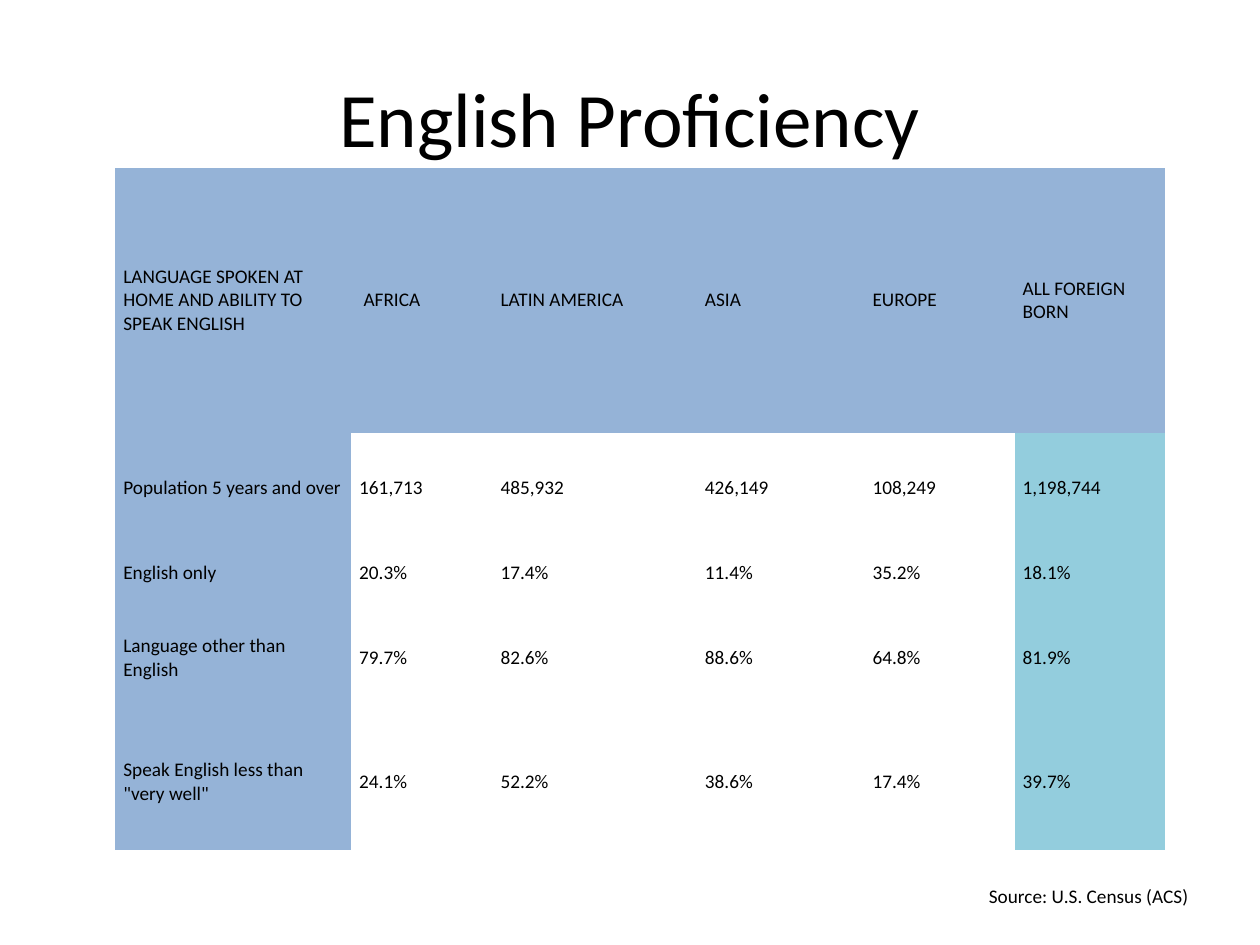
from dataclasses import dataclass

from pptx import Presentation
from pptx.dml.color import RGBColor
from pptx.enum.text import MSO_ANCHOR as Anchor, PP_ALIGN as Align
from pptx.oxml.ns import qn
from pptx.util import Pt


@dataclass(frozen=True)
class Theme:
    """Colours, font and type sizes of the slide."""
    font: str = "Calibri"
    text: RGBColor = RGBColor(0x00, 0x00, 0x00)
    heading_fill: RGBColor = RGBColor(0x95, 0xB3, 0xD7)
    total_fill: RGBColor = RGBColor(0x93, 0xCD, 0xDD)
    title_size: int = 44
    body_size: int = 11


THEME = Theme()
NO_STYLE_NO_GRID = "{2D5ABB26-0587-4C30-8999-92F81FD0307C}"
COLUMN_WIDTHS = [134.8, 80.8, 116.8, 95.8, 85.8, 85.8]
ROW_HEIGHTS = [151.2, 63.4, 33.8, 63.4, 77.8]
ROWS = [
    ["LANGUAGE SPOKEN AT HOME AND ABILITY TO SPEAK ENGLISH",
     " AFRICA", "LATIN AMERICA", "ASIA", "EUROPE", "ALL FOREIGN BORN"],
    ["Population 5 years and over",
     "161,713", "485,932", "426,149", "108,249", "1,198,744"],
    ["English only", "20.3%", "17.4%", "11.4%", "35.2%", "18.1%"],
    ["Language other than English", "79.7%", "82.6%", "88.6%", "64.8%", "81.9%"],
    ['Speak English less than "very well"',
     "24.1%", "52.2%", "38.6%", "17.4%", "39.7%"],
]


def style_paragraph(paragraph, size, align=Align.LEFT):
    """Set the theme font, a size and an alignment on a paragraph."""
    paragraph.alignment = align
    paragraph.font.name = THEME.font
    paragraph.font.size = Pt(size)
    paragraph.font.color.rgb = THEME.text


def add_text(slide, text, box, size, align=Align.LEFT, anchor=Anchor.TOP):
    """Add a wrapping text box with one paragraph."""
    shape = slide.shapes.add_textbox(*map(Pt, box))
    frame = shape.text_frame
    frame.word_wrap = True
    frame.vertical_anchor = anchor
    frame.text = text
    style_paragraph(frame.paragraphs[0], size, align)


def fill_cell(cell, color):
    """Fill a cell with a colour, or leave it clear."""
    if color is None:
        cell.fill.background()
    else:
        cell.fill.solid()
        cell.fill.fore_color.rgb = color


def cell_color(row, column):
    """Return the fill of a heading, total or plain cell."""
    if row == 0 or column == 0:
        return THEME.heading_fill
    return THEME.total_fill if column == len(COLUMN_WIDTHS) - 1 else None


def add_language_table(slide, left, top):
    """Add the table of language ability by region of birth."""
    frame = slide.shapes.add_table(
        len(ROWS), len(COLUMN_WIDTHS), Pt(left), Pt(top),
        Pt(sum(COLUMN_WIDTHS)), Pt(sum(ROW_HEIGHTS)))
    frame.element.find(f".//{qn('a:tableStyleId')}").text = NO_STYLE_NO_GRID
    table = frame.table
    table.first_row = table.horz_banding = False
    for column, width in zip(table.columns, COLUMN_WIDTHS):
        column.width = Pt(width)
    for row, height in zip(table.rows, ROW_HEIGHTS):
        row.height = Pt(height)
    for row, texts in enumerate(ROWS):
        for column, text in enumerate(texts):
            cell = table.cell(row, column)
            cell.text = text
            cell.vertical_anchor = Anchor.MIDDLE
            cell.margin_left = cell.margin_right = Pt(4.5)
            cell.margin_top = cell.margin_bottom = Pt(2.25)
            style_paragraph(cell.text_frame.paragraphs[0], THEME.body_size)
            fill_cell(cell, cell_color(row, column))


def main():
    """Build and save the slide."""
    presentation = Presentation()
    presentation.slide_width, presentation.slide_height = Pt(720), Pt(540)
    slide = presentation.slides.add_slide(presentation.slide_layouts[6])
    add_text(slide, "English Proficiency", (36, 21.6, 648, 90),
             THEME.title_size, Align.CENTER, Anchor.MIDDLE)
    add_language_table(slide, 66, 96)
    add_text(slide, "Source: U.S. Census (ACS)", (558, 501.8, 150, 20.6),
             THEME.body_size)
    presentation.save("out.pptx")


if __name__ == "__main__":
    main()
